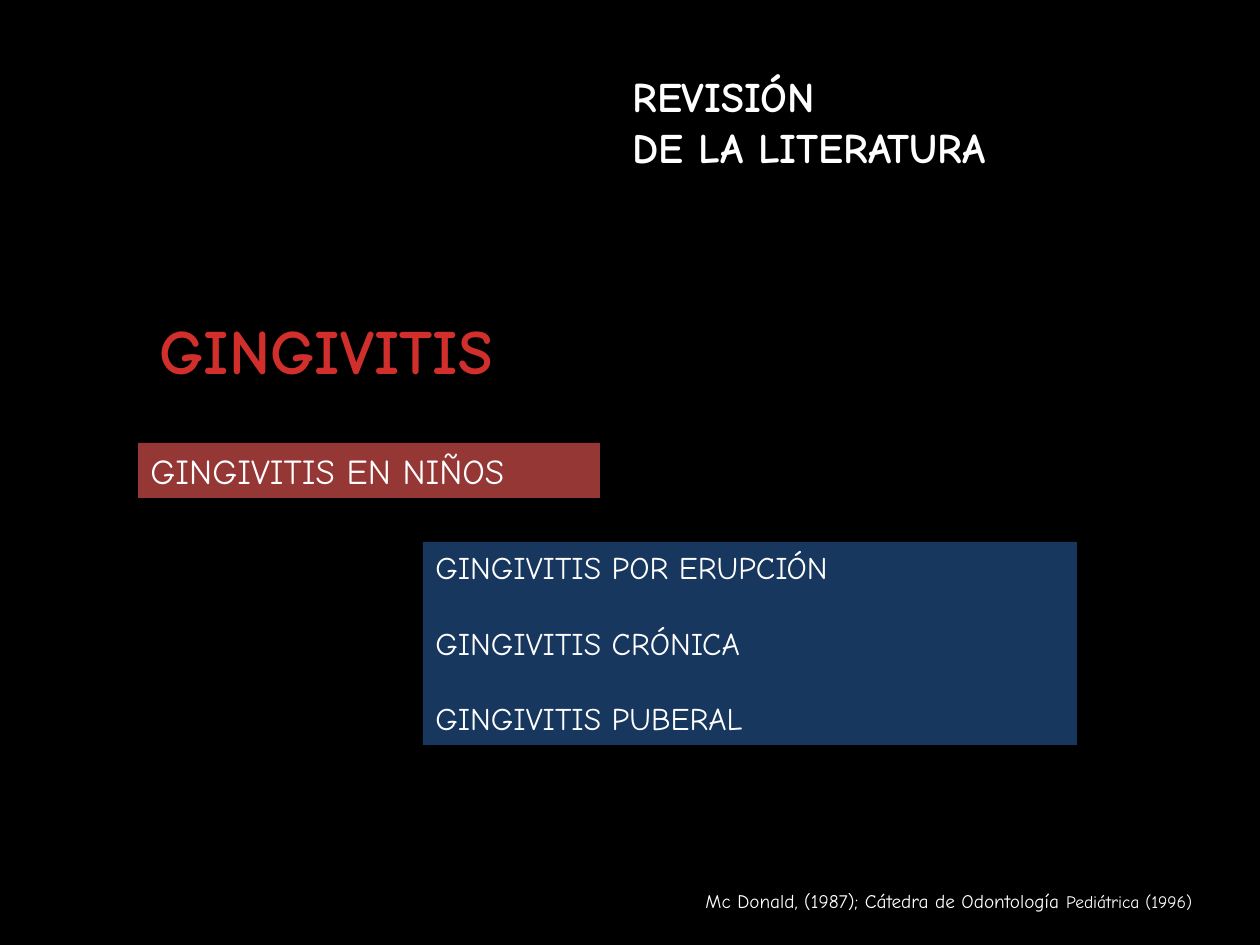
from pptx import Presentation
from pptx.dml.color import RGBColor
from pptx.enum.shapes import MSO_SHAPE
from pptx.enum.text import MSO_ANCHOR, MSO_AUTO_SIZE, PP_ALIGN
from pptx.util import Emu, Pt

FONT = "Comic Neue"
WHITE = "FFFFFF"


def px(n):
    return Emu(round(n * 914400 / 126))


def rgb(code):
    return RGBColor.from_string(code)


def place(sp, box):
    sp.left, sp.top, sp.width, sp.height = map(px, box)


def style(font, size, color=WHITE, bold=False):
    font.name = FONT
    font.size = Pt(size)
    font.bold = bold
    font.color.rgb = rgb(color)


def write(sp, lines, size, color=WHITE, bold=False, gap=0, anchor=MSO_ANCHOR.TOP):
    tf = sp.text_frame
    tf.word_wrap = True
    tf.auto_size = MSO_AUTO_SIZE.NONE
    tf.vertical_anchor = anchor
    for i, line in enumerate(lines):
        p = tf.paragraphs[0] if i == 0 else tf.add_paragraph()
        p.text = line
        p.alignment = PP_ALIGN.LEFT
        p.space_before = Pt(gap if i else 0)
        style(p.font, size, color, bold)


def add_panel(s, box, fill, lines, size, gap=0):
    sp = s.shapes.add_shape(MSO_SHAPE.RECTANGLE, *map(px, box))
    sp.shadow.inherit = False
    sp.fill.solid()
    sp.fill.fore_color.rgb = rgb(fill)
    sp.line.fill.background()
    write(sp, lines, size, gap=gap)


def add_label(s, box, text, size, color=WHITE, bold=False):
    sp = s.shapes.add_textbox(*map(px, box))
    write(sp, [text], size, color, bold)
    return sp


def main():
    prs = Presentation()
    prs.slide_width, prs.slide_height = px(1260), px(945)
    s = prs.slides.add_slide(prs.slide_layouts[5])
    s.background.fill.solid()
    s.background.fill.fore_color.rgb = rgb("000000")

    # Section title
    title = s.shapes.title
    place(title, (620, 42, 591, 158))
    write(title, ["REVISIÓN", "DE LA LITERATURA"], 24, bold=True,
          anchor=MSO_ANCHOR.MIDDLE)

    # Topic and its types
    add_label(s, (147, 305, 444, 88), "GINGIVITIS", 36, "D02F2C", bold=True)
    add_panel(s, (138, 443, 462, 55), "953735", ["GINGIVITIS EN NIÑOS"], 20)
    add_panel(s, (423, 542, 654, 203), "17375E",
              ["GINGIVITIS POR ERUPCIÓN", "GINGIVITIS CRÓNICA", "GINGIVITIS PUBERAL"],
              18, gap=21.6)

    # Reference
    source = add_label(s, (693, 883, 562, 37),
                       "Mc Donald, (1987); Cátedra de Odontología ", 11)
    r = source.text_frame.paragraphs[0].add_run()
    r.text = "Pediátrica (1996)"
    r.font.size = Pt(10)

    prs.save("out.pptx")


if __name__ == "__main__":
    main()
